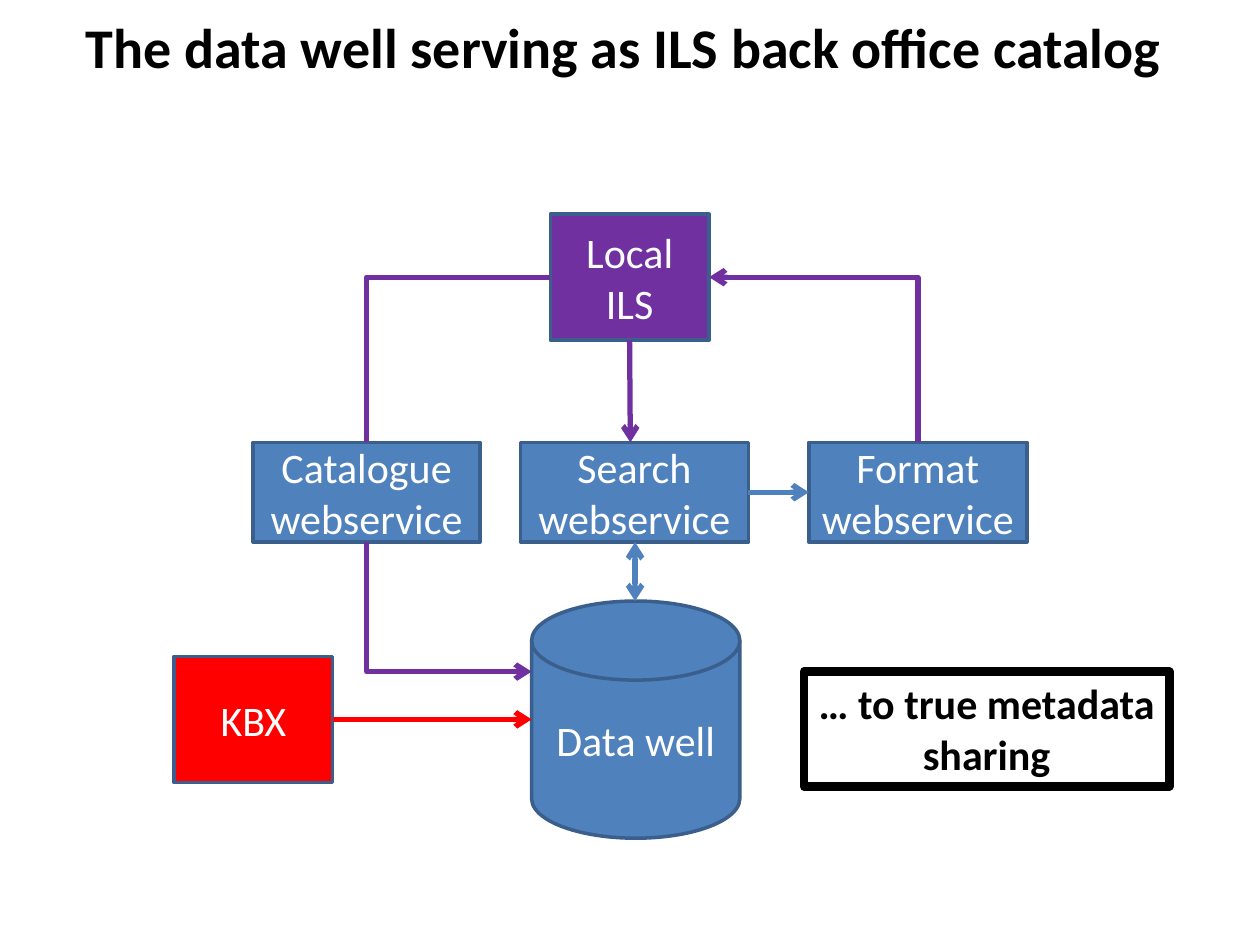
"""Build the slide on the data well as back office catalogue."""
import pptx
import pptx.util
import pptx.dml.color
import pptx.enum.shapes
import pptx.enum.text
import pptx.oxml
import pptx.oxml.ns

Pt = pptx.util.Pt
SHAPE = pptx.enum.shapes.MSO_SHAPE
CONNECTOR = pptx.enum.shapes.MSO_CONNECTOR
ANCHOR = pptx.enum.text.MSO_ANCHOR
ALIGN = pptx.enum.text.PP_ALIGN
BLUE, PURPLE, RED = "4F81BD", "7030A0", "FF0000"
OUTLINE, BLACK, WHITE = "3A5F8C", "000000", "FFFFFF"


def color(value):
    return pptx.dml.color.RGBColor.from_string(value)


def write(shape, text, size=24, ink=WHITE, bold=False, align=ALIGN.CENTER,
          anchor=ANCHOR.MIDDLE, wrap=True):
    frame = shape.text_frame
    frame.word_wrap = wrap
    frame.vertical_anchor = anchor
    frame.text = text
    for paragraph in frame.paragraphs:
        paragraph.alignment = align
        font = paragraph.runs[0].font
        font.name, font.size, font.bold = "Calibri", Pt(size), bold
        font.color.rgb = color(ink)


presentation = pptx.Presentation()
presentation.slide_width, presentation.slide_height = Pt(720), Pt(540)
slide = presentation.slides.add_slide(presentation.slide_layouts[6])

title = slide.shapes.add_textbox(Pt(42), Pt(3.6), Pt(636), Pt(46))
write(title, "The data well serving as ILS back office catalog", size=32,
      ink=BLACK, bold=True, align=ALIGN.LEFT, anchor=ANCHOR.TOP, wrap=False)

service_top, service_height = 252.8, 57
nodes = [
    ("Data well", SHAPE.FLOWCHART_MAGNETIC_DISK, BLUE, 303.8, 343.5, 119, 135.5),
    ("Local ILS", SHAPE.RECTANGLE, PURPLE, 314.5, 122.4, 90.7, 72),
    ("KBX", SHAPE.RECTANGLE, RED, 99.4, 375.1, 90.7, 72),
]
for name, left, width in [("Catalogue", 144.7, 129.6), ("Search", 297.4, 130.3),
                          ("Format", 462.2, 124.6)]:
    nodes.append((f"{name}\nwebservice", SHAPE.RECTANGLE, BLUE,
                  left, service_top, width, service_height))
for text, kind, fill, left, top, width, height in nodes:
    node = slide.shapes.add_shape(kind, Pt(left), Pt(top), Pt(width), Pt(height))
    node.shadow.inherit = False
    node.fill.solid()
    node.fill.fore_color.rgb = color(fill)
    node.line.color.rgb = color(OUTLINE)
    node.line.width = Pt(2)
    write(node, text)

conclusion = slide.shapes.add_textbox(Pt(459.4), Pt(383.8), Pt(208.8), Pt(65.5))
conclusion.line.color.rgb = color(BLACK)
conclusion.line.width = Pt(5)
write(conclusion, "… to true metadata\nsharing", ink=BLACK, bold=True,
      anchor=ANCHOR.TOP, wrap=False)

service_bottom = service_top + service_height
straight, bent = CONNECTOR.STRAIGHT, CONNECTOR.ELBOW
links = [
    (straight, RED, 190.1, 411.1, 303.8, 411.1, ["tailEnd"]),
    (bent, PURPLE, 314.5, 158.4, 209.5, service_top, []),
    (bent, PURPLE, 303.8, 383.8, 209.5, service_bottom, ["headEnd"]),
    (straight, PURPLE, 359.8, 194.4, 360.2, service_top, ["tailEnd"]),
    (straight, BLUE, 362.9, service_bottom, 362.9, 343.5, ["headEnd", "tailEnd"]),
    (straight, BLUE, 427.7, 281.3, 462.2, 281.3, ["tailEnd"]),
    (bent, PURPLE, 405.2, 158.4, 524.5, service_top, ["headEnd"]),
]
for kind, ink, *ends, arrows in links:
    link = slide.shapes.add_connector(kind, *map(Pt, ends))
    link.line.color.rgb = color(ink)
    link.line.width = Pt(3)
    properties = link._element.spPr
    if kind == bent:
        geometry = properties.find(pptx.oxml.ns.qn("a:prstGeom"))
        geometry.set("prst", "bentConnector2")
    line = properties.find(pptx.oxml.ns.qn("a:ln"))
    for arrow in arrows:
        line.append(pptx.oxml.parse_xml(
            f'<a:{arrow} {pptx.oxml.ns.nsdecls("a")} type="arrow"/>'))
    properties.append(pptx.oxml.parse_xml(
        f'<a:effectLst {pptx.oxml.ns.nsdecls("a")}/>'))

presentation.save("out.pptx")
